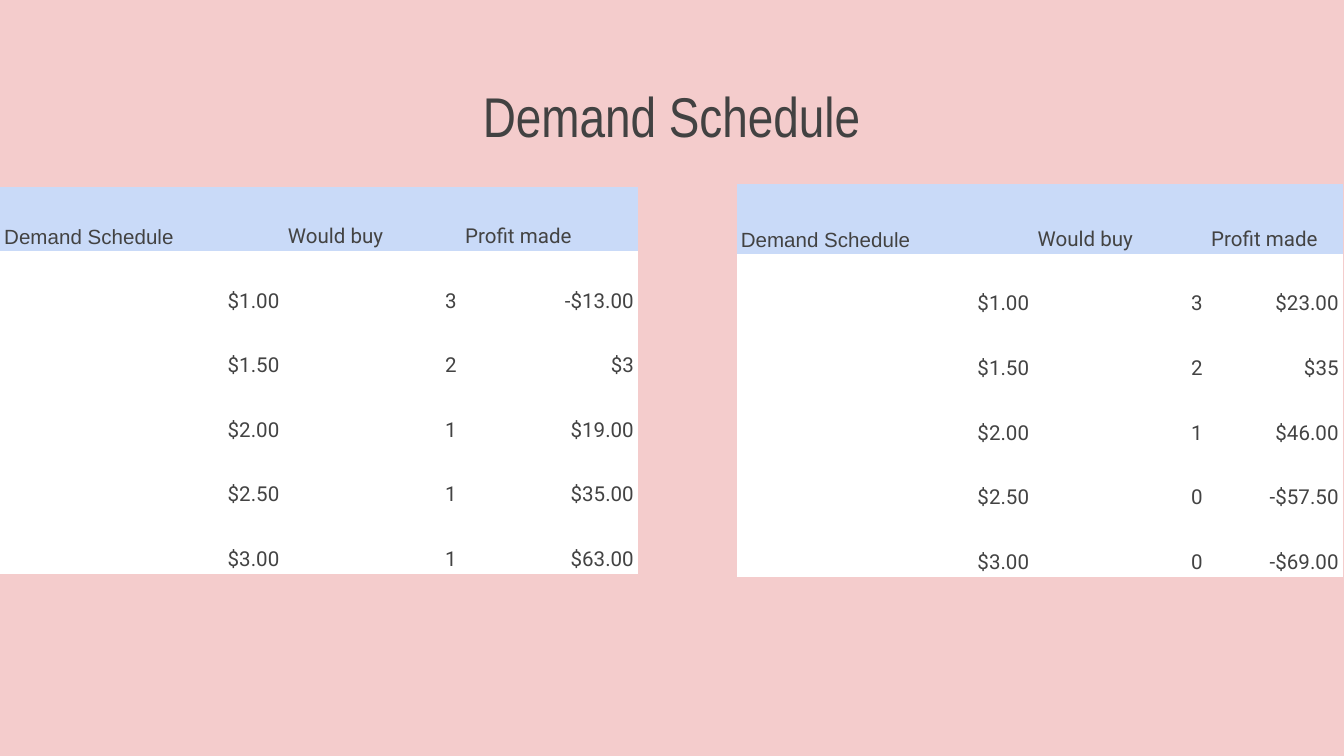
from dataclasses import dataclass

from pptx import Presentation
from pptx.dml.color import RGBColor
from pptx.enum.text import MSO_ANCHOR, MSO_AUTO_SIZE, PP_ALIGN
from pptx.oxml.ns import qn
from pptx.util import Cm, Pt


@dataclass(frozen=True)
class Theme:
    back: str = "F4CCCC"
    head: str = "C9DAF8"
    body: str = "FFFFFF"
    dark: str = "424242"
    text: str = "434343"
    title_font: str = "Arial Narrow"
    label_font: str = "Arial"
    cell_font: str = "Roboto"
    title_size: int = 30
    cell_size: int = 11


THEME = Theme()
ROW = 1.22
PLAIN = "{2D5ABB26-0587-4C30-8999-92F81FD0307C}"  # no style, no grid
HEADS = ("Demand Schedule", "Would buy", "Profit made")
PRICES = ("$1.00", "$1.50", "$2.00", "$2.50", "$3.00")


def paint(fill, color):
    fill.solid()
    fill.fore_color.rgb = RGBColor.from_string(color)


def style(para, font, size, color):
    for run in para.runs:
        run.font.name = font
        run.font.size = Pt(size)
        run.font.color.rgb = RGBColor.from_string(color)


def add_title(slide, text):
    title = slide.shapes.title
    title.left, title.top = Cm(0.86), Cm(1.04)
    title.width, title.height = Cm(23.67), Cm(2.03)
    frame = title.text_frame
    frame.text = text
    frame.auto_size = MSO_AUTO_SIZE.NONE
    frame.vertical_anchor = MSO_ANCHOR.BOTTOM
    frame.margin_left = frame.margin_right = Cm(0.25)
    frame.margin_top = frame.margin_bottom = Cm(0.25)
    para = frame.paragraphs[0]
    para.alignment = PP_ALIGN.CENTER
    style(para, THEME.title_font, THEME.title_size, THEME.dark)


def fill_cell(cell, text, is_head, is_label):
    paint(cell.fill, THEME.head if is_head else THEME.body)
    cell.vertical_anchor = MSO_ANCHOR.BOTTOM
    cell.margin_left = cell.margin_right = Cm(0.08)
    cell.margin_top = cell.margin_bottom = Cm(0.05)
    cell.text_frame.text = text
    para = cell.text_frame.paragraphs[0]
    para.alignment = PP_ALIGN.LEFT if is_head else PP_ALIGN.RIGHT
    if is_label:
        style(para, THEME.label_font, THEME.cell_size, THEME.dark)
    else:
        para.line_spacing = 1.15
        style(para, THEME.cell_font, THEME.cell_size, THEME.text)


def add_schedule(slide, left, top, widths, head_height, counts, profits):
    rows = [HEADS, *zip(PRICES, counts, profits)]
    height = head_height + ROW * len(PRICES)
    frame = slide.shapes.add_table(
        len(rows), len(HEADS), Cm(left), Cm(top), Cm(sum(widths)), Cm(height)
    )
    table = frame.table
    table.first_row = table.horz_banding = False
    table._tbl.tblPr.find(qn("a:tableStyleId")).text = PLAIN
    for col, width in zip(table.columns, widths):
        col.width = Cm(width)
    for r, row in enumerate(rows):
        table.rows[r].height = Cm(ROW if r else head_height)
        for c, text in enumerate(row):
            fill_cell(table.cell(r, c), text, r == 0, r == c == 0)


def main():
    deck = Presentation()
    deck.slide_width, deck.slide_height = Cm(25.4), Cm(14.29)
    slide = deck.slides.add_slide(deck.slide_layouts[5])
    paint(slide.background.fill, THEME.back)

    # Heading
    add_title(slide, "Demand Schedule")

    # Left schedule
    add_schedule(
        slide, 0, 3.53, (5.36, 3.35, 3.35), ROW,
        "32111", ("-$13.00", "$3", "$19.00", "$35.00", "$63.00"),
    )

    # Right schedule
    add_schedule(
        slide, 13.92, 3.48, (5.61, 3.28, 2.57), 1.32,
        "32100", ("$23.00", "$35", "$46.00", "-$57.50", "-$69.00"),
    )

    deck.save("out.pptx")


if __name__ == "__main__":
    main()
